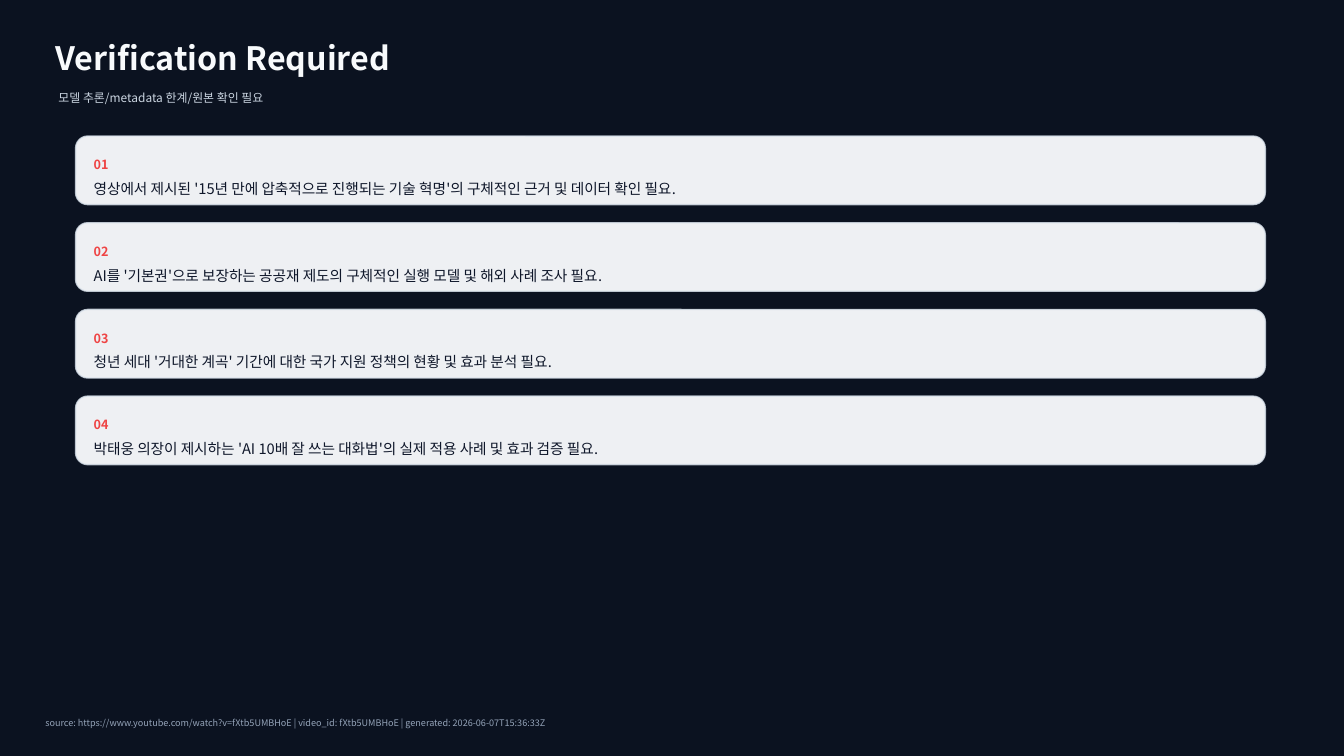
import pptx
import pptx.dml.color
import pptx.enum.shapes
import pptx.enum.text
import pptx.oxml.ns
import pptx.util
from lxml import etree

Inches = pptx.util.Inches
FONT = "Noto Sans CJK KR"
CHECKS = [
    "영상에서 제시된 '15년 만에 압축적으로 진행되는 기술 혁명'의 구체적인 근거 및 데이터 확인 필요.",
    "AI를 '기본권'으로 보장하는 공공재 제도의 구체적인 실행 모델 및 해외 사례 조사 필요.",
    "청년 세대 '거대한 계곡' 기간에 대한 국가 지원 정책의 현황 및 효과 분석 필요.",
    "박태웅 의장이 제시하는 'AI 10배 잘 쓰는 대화법'의 실제 적용 사례 및 효과 검증 필요.",
]
SOURCE = (
    "source: https://www.youtube.com/watch?v=fXtb5UMBHoE"
    " | video_id: fXtb5UMBHoE | generated: 2026-06-07T15:36:33Z"
)


def set_color(color_fill, color, opacity=100):
    color_fill.solid()
    color_fill.fore_color.rgb = pptx.dml.color.RGBColor.from_string(color)
    if opacity < 100:
        qualified = pptx.oxml.ns.qn
        for element in color_fill._xPr.find(qualified("a:solidFill")):
            etree.SubElement(element, qualified("a:alpha"), val=str(opacity * 1000))


def add_text(slide, text, left, top, width, height, *, size, color, bold=False):
    shape = slide.shapes.add_textbox(
        Inches(left), Inches(top), Inches(width), Inches(height)
    )
    frame = shape.text_frame
    frame.word_wrap = True
    frame.vertical_anchor = pptx.enum.text.MSO_ANCHOR.MIDDLE
    frame.margin_left = frame.margin_right = 0
    frame.margin_top = frame.margin_bottom = 0
    run = frame.paragraphs[0].add_run()
    run.text = text
    run.font.size = pptx.util.Pt(size)
    run.font.bold = bold
    run.font.name = FONT
    set_color(run.font.fill, color)
    etree.SubElement(
        run.font._element, pptx.oxml.ns.qn("a:ea"), typeface=FONT
    )


def add_header(slide, left, top, width):
    add_text(slide, "Verification Required", left, top, width, 0.45,
             size=23, color="F8FAFC", bold=True)
    add_text(slide, "모델 추론/metadata 한계/원본 확인 필요",
             left + 0.03, top + 0.48, width - 0.5, 0.28,
             size=8.5, color="CBD5E1")


def add_check_card(slide, number, text, left, top, width, height):
    card = slide.shapes.add_shape(
        pptx.enum.shapes.MSO_SHAPE.ROUNDED_RECTANGLE,
        Inches(left), Inches(top), Inches(width), Inches(height),
    )
    card.shadow.inherit = False
    card.adjustments[0] = 0.12 / height
    set_color(card.fill, "F8FAFC", opacity=96)
    set_color(card.line.fill, "D7E0EA", opacity=80)
    card.line.width = pptx.util.Pt(1)
    padding = 0.18
    text_width = width - 2 * padding
    add_text(slide, f"{number:02d}", left + padding, top + 0.16, text_width, 0.25,
             size=9, color="EF4444", bold=True)
    add_text(slide, text, left + padding, top + 0.5, text_width, 0.04,
             size=10.5, color="0F172A")


def add_check_list(slide, left, top, width, card_height=0.68, gap=0.18):
    for index, text in enumerate(CHECKS):
        card_top = top + index * (card_height + gap)
        add_check_card(slide, index + 1, text, left, card_top, width, card_height)


def add_footer(slide, left, top, width, height):
    add_text(slide, SOURCE, left, top, width, height, size=6.5, color="94A3B8")


def main():
    presentation = pptx.Presentation()
    presentation.slide_width = Inches(13.33)
    presentation.slide_height = Inches(7.5)
    slide = presentation.slides.add_slide(presentation.slide_layouts[6])
    set_color(slide.background.fill, "0B1220")
    add_header(slide, 0.55, 0.35, 12)
    add_check_list(slide, 0.75, 1.35, 11.8)
    add_footer(slide, 0.45, 7.05, 12.4, 0.25)
    presentation.save("out.pptx")


if __name__ == "__main__":
    main()
